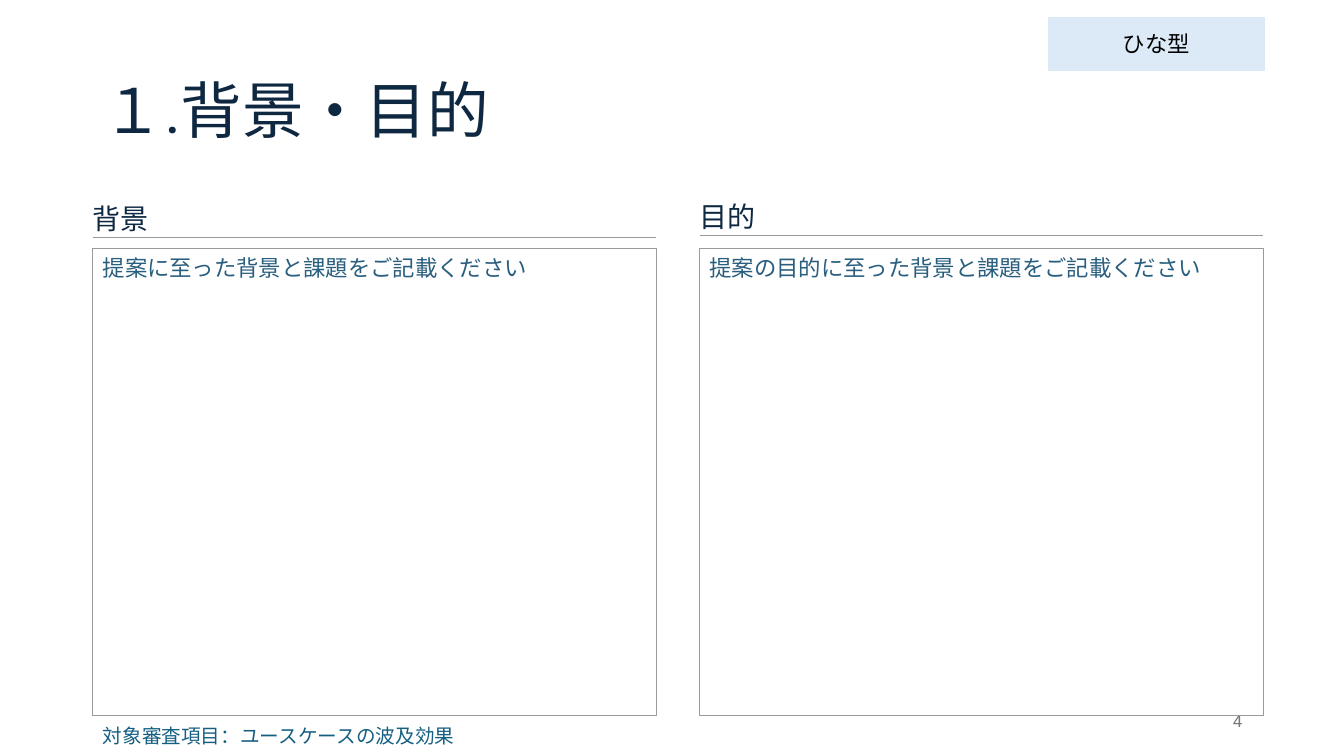
"""Build the background and purpose template slide."""
from lxml.etree import SubElement
from pptx import Presentation
from pptx.dml.color import RGBColor
from pptx.enum.shapes import MSO_CONNECTOR, MSO_SHAPE
from pptx.enum.text import MSO_ANCHOR, PP_ALIGN
from pptx.oxml.ns import qn
from pptx.util import Pt

PX = 9144
FONT = "Roboto"
NAVY = RGBColor(0x0E, 0x28, 0x41)
STEEL = RGBColor(0x29, 0x5E, 0x7E)
TEAL = RGBColor(0x15, 0x60, 0x82)
PALE_BLUE = RGBColor(0xDC, 0xEA, 0xF7)
LINE_GRAY = RGBColor(0x9A, 0x9A, 0x9A)
NUMBER_GRAY = RGBColor(0x79, 0x79, 0x79)
BLACK = RGBColor(0, 0, 0)


def write(shape, text, size, color, anchor=MSO_ANCHOR.MIDDLE, align=PP_ALIGN.LEFT):
    frame = shape.text_frame
    frame.text = text
    frame.word_wrap = True
    frame.vertical_anchor = anchor
    paragraph = frame.paragraphs[0]
    paragraph.alignment = align
    font = paragraph.runs[0].font
    font.name = FONT
    font.size = Pt(size)
    font.color.rgb = color
    return frame


def add_box(left, top, width, height, line_color):
    box = slide.shapes.add_shape(
        MSO_SHAPE.RECTANGLE, left * PX, top * PX, width * PX, height * PX)
    box.shadow.inherit = False
    box.fill.background()
    box.line.color.rgb = line_color
    box.line.width = Pt(0.75)
    return box


presentation = Presentation()
presentation.slide_width = 1333 * PX
presentation.slide_height = 750 * PX
slide = presentation.slides.add_slide(presentation.slide_layouts[5])

number = slide.shapes.add_textbox(942 * PX, 695 * PX, 300 * PX, 40 * PX)
write(number, "4", 12, NUMBER_GRAY, align=PP_ALIGN.RIGHT)

title = slide.shapes.title
title.left, title.top, title.width, title.height = 92 * PX, 40 * PX, 1150 * PX, 145 * PX
write(title, "１.背景・目的", 44, NAVY).paragraphs[0].line_spacing = 0.9

tag = add_box(1040, 17, 214, 53, PALE_BLUE)
tag.fill.solid()
tag.fill.fore_color.rgb = PALE_BLUE
write(tag, "ひな型", 16, BLACK, align=PP_ALIGN.CENTER)

columns = [
    (92, 199, "背景", "提案に至った背景と課題をご記載ください"),
    (694, 197, "目的", "提案の目的に至った背景と課題をご記載ください"),
]
for left, top, heading, prompt in columns:
    heading_box = slide.shapes.add_textbox(left * PX, top * PX, 508 * PX, 34 * PX)
    frame = write(heading_box, heading, 20, NAVY, MSO_ANCHOR.BOTTOM)
    frame.margin_left = frame.margin_right = frame.margin_top = frame.margin_bottom = 0

    rule_top = (top + 37) * PX
    rule = slide.shapes.add_connector(
        MSO_CONNECTOR.STRAIGHT, left * PX, rule_top, (left + 559) * PX, rule_top)
    rule.line.color.rgb = LINE_GRAY
    rule.line.width = Pt(0.75)
    SubElement(rule.element.spPr, qn("a:effectLst"))

    entry_box = add_box(left, 247, 559, 463, LINE_GRAY)
    write(entry_box, prompt, 16, STEEL, MSO_ANCHOR.TOP)

criterion = slide.shapes.add_textbox(80 * PX, 713 * PX, 503 * PX, 34 * PX)
frame = write(criterion, "対象審査項目：ユースケースの波及効果", 14, TEAL)
frame.margin_left = 22 * PX

presentation.save("out.pptx")
